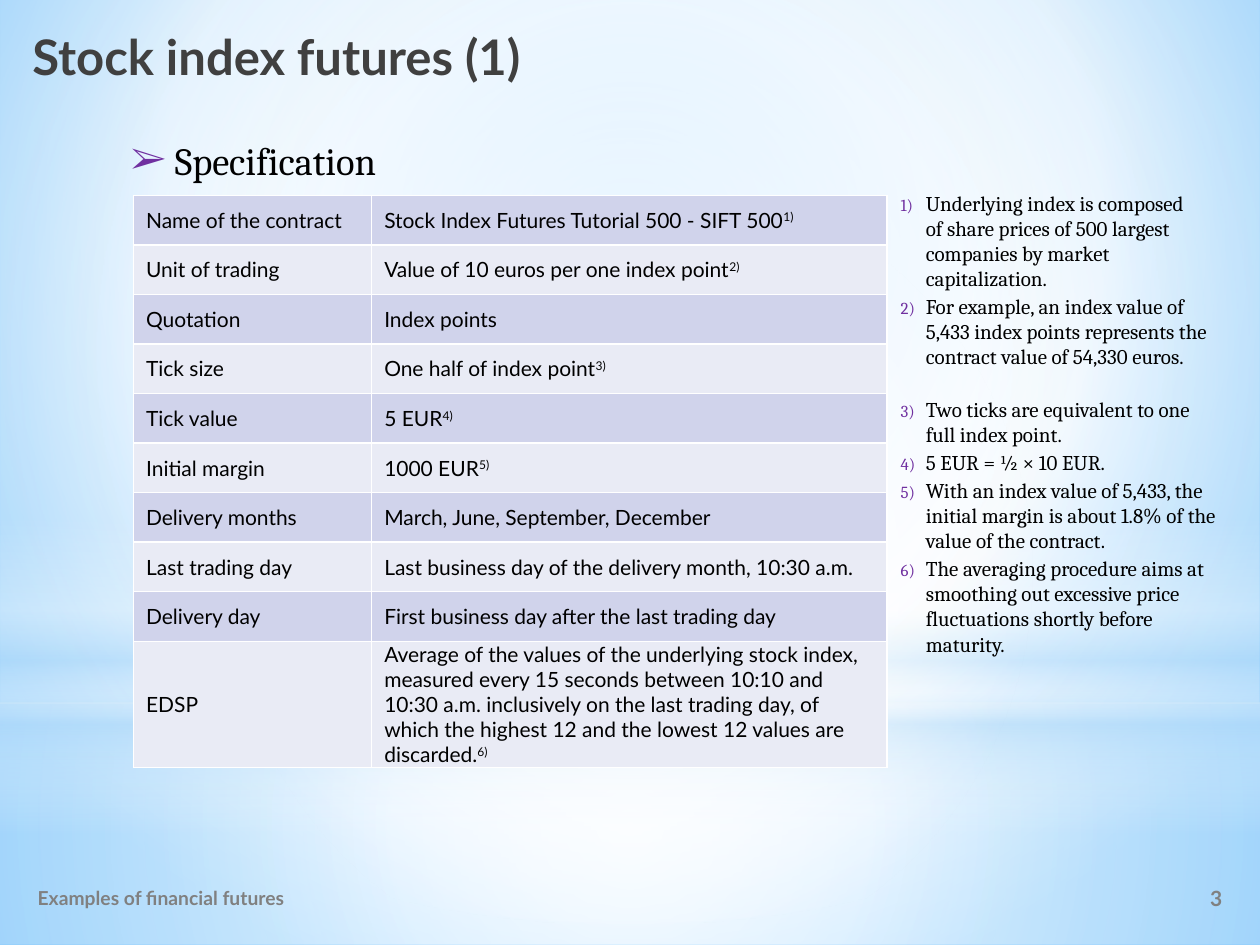
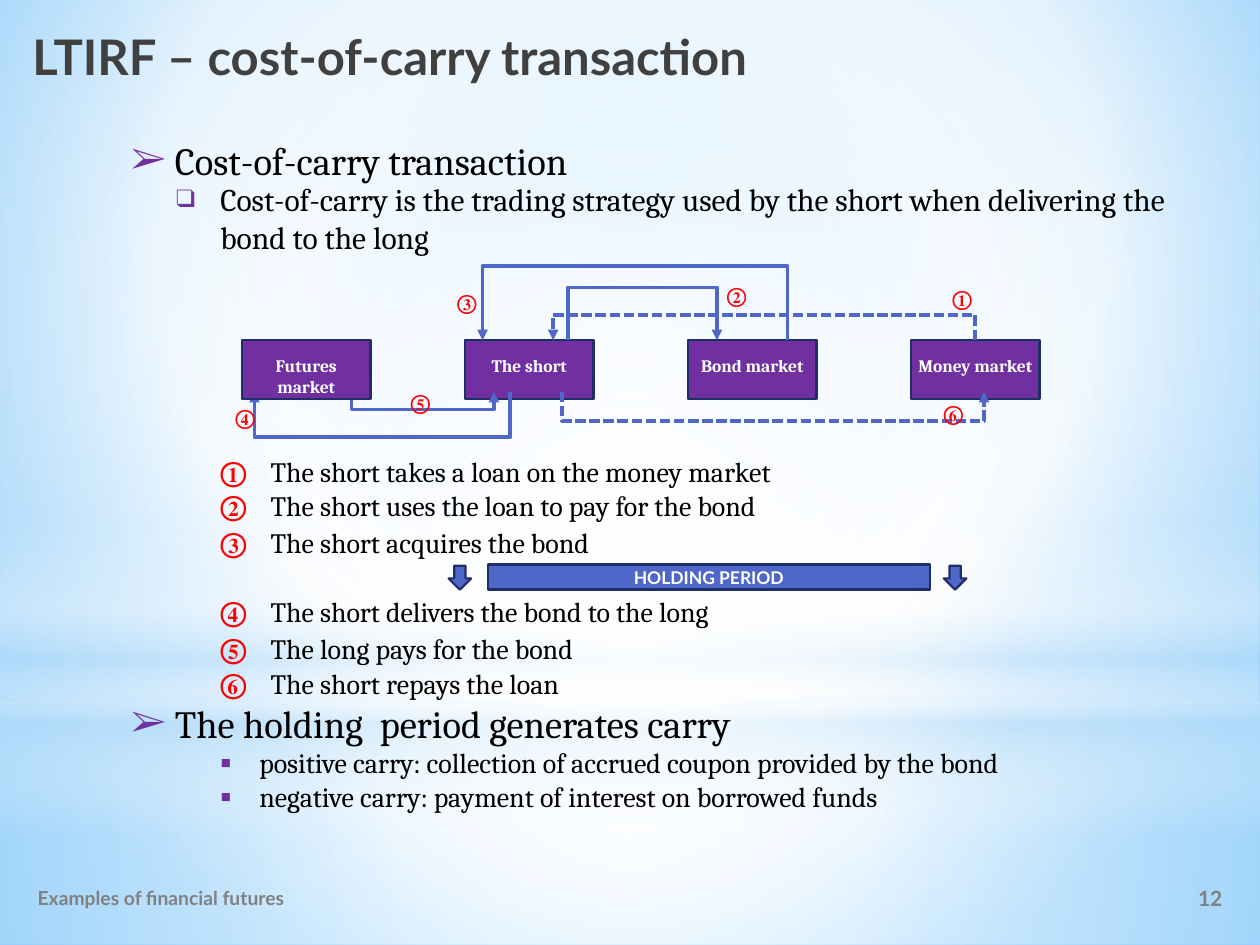
from pptx import Presentation
from pptx.dml.color import RGBColor
from pptx.enum.dml import MSO_LINE
from pptx.enum.shapes import MSO_SHAPE
from pptx.enum.text import MSO_ANCHOR, PP_ALIGN
from pptx.oxml import parse_xml
from pptx.oxml.ns import nsdecls, qn
from pptx.util import Inches, Pt

RECTANGLE, ELLIPSE, DOWN_ARROW = MSO_SHAPE.RECTANGLE, MSO_SHAPE.OVAL, MSO_SHAPE.DOWN_ARROW
LEFT, CENTER, RIGHT = PP_ALIGN.LEFT, PP_ALIGN.CENTER, PP_ALIGN.RIGHT
TOP, MIDDLE = MSO_ANCHOR.TOP, MSO_ANCHOR.MIDDLE
DASH = MSO_LINE.SQUARE_DOT

COLORS = {
    "title": "404040", "footer": "808080", "text": "000000", "white": "FFFFFF",
    "purple": "7030A0", "blue": "4E67C8", "navy": "1F2E69", "red": "FF0000",
    "row_dark": "D0D3EB", "row_light": "E9EBF5",
    "sky": "9ED5FF", "deep_sky": "5BB9FF", "haze": "B4DCFA",
}
COLOR = {name: RGBColor.from_string(value) for name, value in COLORS.items()}
HEADING_FONT, BODY_FONT = "Lato", "Cambria"


def set_gradient(properties, stops, focus=None):
    """Fill with (position, color, opacity) stops, radial around focus or else top to bottom."""
    stop_xml = "".join(
        f'<a:gs pos="{position * 1000}"><a:srgbClr val="{COLORS[color]}">'
        f'<a:alpha val="{opacity * 1000}"/></a:srgbClr></a:gs>'
        for position, color, opacity in stops)
    if focus:
        left, top, right, bottom = (edge * 1000 for edge in focus)
        direction = (f'<a:path path="circle"><a:fillToRect l="{left}" t="{top}" '
                     f'r="{right}" b="{bottom}"/></a:path>')
    else:
        direction = '<a:lin ang="5400000" scaled="0"/>'
    gradient = parse_xml(f'<a:gradFill {nsdecls("a")} rotWithShape="1">'
                         f'<a:gsLst>{stop_xml}</a:gsLst>{direction}</a:gradFill>')
    properties.replace(properties.find(qn("a:gradFill")), gradient)


def add_text(page, left, top, width, height, text, size, color="text", font=BODY_FONT,
             bold=False, align=LEFT, anchor=TOP, bullet=None, indent=0, bullet_size=100):
    """Add a one-paragraph text box; a whole-number bullet is a list number such as 2)."""
    box = page.shapes.add_textbox(Inches(left), Inches(top), Inches(width), Inches(height))
    frame = box.text_frame
    frame.word_wrap = True
    frame.vertical_anchor = anchor
    para = frame.paragraphs[0]
    para.text = text
    para.alignment = align
    span = para.runs[0]
    span.font.name, span.font.size, span.font.bold = font, Pt(size), bold
    span.font.color.rgb = COLOR[color]
    if bullet:
        settings = para._p.get_or_add_pPr()
        settings.set("marL", str(Inches(indent)))
        settings.set("indent", str(-Inches(indent)))
        if isinstance(bullet, int):
            mark = f'<a:buAutoNum {nsdecls("a")} type="arabicParenR" startAt="{bullet}"/>'
        else:
            mark = f'<a:buChar {nsdecls("a")} char="{bullet}"/>'
        for xml in (f'<a:buClr {nsdecls("a")}><a:srgbClr val="{COLORS["purple"]}"/></a:buClr>',
                    f'<a:buSzPct {nsdecls("a")} val="{bullet_size * 1000}"/>',
                    f'<a:buFont {nsdecls("a")} typeface="{font}"/>', mark):
            settings.append(parse_xml(xml))


deck = Presentation()
deck.slide_width, deck.slide_height = Inches(10), Inches(7.5)
blank = deck.slide_layouts[6]
specification = deck.slides.add_slide(blank)
carry = deck.slides.add_slide(blank)

# Shared background and light bands, kept on the master
master = deck.slide_master
master.background.fill.gradient()
set_gradient(master.element.find(".//" + qn("p:bgPr")),
             [(0, "sky", 100), (60, "white", 100), (100, "deep_sky", 100)], (20, 10, 20, 60))
middle = (50, 50, 50, 50)
bands = [
    (RECTANGLE, 5.58, 1.92, [(0, "white", 91), (37, "white", 76), (100, "haze", 79)], middle),
    (RECTANGLE, 0, 5.58, [(0, "white", 89), (48, "white", 62), (100, "haze", 79)], middle),
    (RECTANGLE, 4.12, 2.5, [(0, "white", 0), (29, "white", 30), (45, "haze", 40),
                            (55, "white", 26), (65, "haze", 60), (100, "white", 0)], None),
    (ELLIPSE, 1.75, 5.58, [(0, "white", 100), (56, "white", 0)], middle),
]
for kind, top, height, stops, focus in bands:
    band = specification.shapes.add_shape(kind, 0, Inches(top), Inches(10), Inches(height))
    band.shadow.inherit = False
    band.line.fill.background()
    band.fill.gradient()
    set_gradient(band.element.spPr, stops, focus)
    master.shapes.element.append(band.element)

# Titles, footers, page numbers and first headings
for page, title, number, heading in [
    (specification, "Stock index futures (1)", "3", "Specification"),
    (carry, "LTIRF – cost-of-carry transaction", "12", "Cost-of-carry transaction"),
]:
    add_text(page, 0.2, 6.93, 3.62, 0.39, "Examples of financial futures", 11, "footer",
             HEADING_FONT, True, anchor=MIDDLE)
    add_text(page, 7.83, 6.93, 1.97, 0.39, number, 12, "footer", HEADING_FONT, True,
             RIGHT, MIDDLE)
    add_text(page, 0.16, 0.16, 9, 0.71, title, 28, "title", HEADING_FONT, True)
    add_text(page, 0.94, 1.04, 5, 0.47, heading, 22, bullet="➢", indent=0.35)

# Contract table: label, value, footnote mark
contract = [
    ("Name of the contract", "Stock Index Futures Tutorial 500 - SIFT 500", "1)"),
    ("Unit of trading", "Value of 10 euros per one index point", "2)"),
    ("Quotation", "Index points", ""),
    ("Tick size", "One half of index point", "3)"),
    ("Tick value", "5 EUR", "4)"),
    ("Initial margin", "1000 EUR", "5)"),
    ("Delivery months", "March, June, September, December", ""),
    ("Last trading day", "Last business day of the delivery month, 10:30 a.m.", ""),
    ("Delivery day", "First business day after the last trading day", ""),
    ("EDSP", "Average of the values of the underlying stock index, measured every 15 seconds "
     "between 10:10 and 10:30 a.m. inclusively on the last trading day, of which the highest "
     "12 and the lowest 12 values are discarded.", "6)"),
]
table_height, last_height = 4.54, 1
table = specification.shapes.add_table(len(contract), 2, Inches(1.06), Inches(1.55),
                                       Inches(5.98), Inches(table_height)).table
table.first_row = table.horz_banding = False
table.columns[0].width, table.columns[1].width = Inches(1.89), Inches(4.09)
for index, (label, value, mark) in enumerate(contract):
    is_last = index == len(contract) - 1
    row_height = (table_height - last_height) / (len(contract) - 1)
    table.rows[index].height = Inches(last_height if is_last else row_height)
    for column, text in enumerate((label, value)):
        cell = table.cell(index, column)
        cell.margin_top = cell.margin_bottom = 0
        cell.vertical_anchor = MIDDLE
        para = cell.text_frame.paragraphs[0]
        para.text = text
        if column == 1 and mark:
            note_mark = para.add_run()
            note_mark.text = mark
            note_mark.font._element.set("baseline", "30000")
        for span in para.runs:
            span.font.name, span.font.size = HEADING_FONT, Pt(12)
            span.font.color.rgb = COLOR["text"]
        for side in "LRTB":
            cell._tc.get_or_add_tcPr().append(parse_xml(
                f'<a:ln{side} {nsdecls("a")} w="12700"><a:solidFill>'
                f'<a:srgbClr val="{COLORS["white"]}"/></a:solidFill></a:ln{side}>'))
        cell.fill.solid()
        cell.fill.fore_color.rgb = COLOR["row_light" if index % 2 else "row_dark"]

# Numbered notes beside the table: top, width, height, text
notes = [
    (1.46, 2.6, 0.91, "Underlying index is composed of share prices of 500 largest companies "
     "by market capitalization."),
    (2.28, 2.68, 0.71, "For example, an index value of 5,433 index points represents the "
     "contract value of 54,330 euros."),
    (3.1, 2.68, 0.5, "Two ticks are equivalent to one full index point."),
    (3.52, 2.68, 0.3, "5 EUR = ½ × 10 EUR."),
    (3.74, 2.7, 0.71, "With an index value of 5,433, the initial margin is about 1.8% of the "
     "value of the contract."),
    (4.36, 2.68, 0.91, "The averaging procedure aims at smoothing out excessive price "
     "fluctuations shortly before maturity."),
]
for number, (top, width, height, text) in enumerate(notes, 1):
    add_text(specification, 7.05, top, width, height, text, 12, bullet=number, indent=0.2,
             bullet_size=80)

# Cost-of-carry definition
add_text(carry, 1.3, 1.38, 8.43, 0.71, "Cost-of-carry is the trading strategy used by the "
         "short when delivering the bond to the long", 18, bullet="❑", indent=0.35,
         bullet_size=80)

# Market boxes, holding period bar and its arrows: kind, position, fill, text, font, anchor
markets = ["Futures market", "The short", "Bond market", "Money market"]
blocks = [(RECTANGLE, 1.92 + 1.77 * index, 2.7, 1.02, 0.47, "purple", name, BODY_FONT, TOP)
          for index, name in enumerate(markets)]
blocks += [
    (RECTANGLE, 3.87, 4.48, 3.51, 0.2, "blue", "HOLDING PERIOD", HEADING_FONT, MIDDLE),
    (DOWN_ARROW, 3.56, 4.49, 0.18, 0.19, "blue", "", HEADING_FONT, MIDDLE),
    (DOWN_ARROW, 7.49, 4.49, 0.18, 0.19, "blue", "", HEADING_FONT, MIDDLE),
]
block_shapes = []
for kind, left, top, width, height, color, text, font, anchor in blocks:
    block = carry.shapes.add_shape(kind, Inches(left), Inches(top), Inches(width), Inches(height))
    block.shadow.inherit = False
    block.fill.solid()
    block.fill.fore_color.rgb = COLOR[color]
    block.line.color.rgb, block.line.width = COLOR["navy"], Pt(1.25)
    block_shapes.append(block)
    if text:
        frame = block.text_frame
        frame.word_wrap = True
        frame.vertical_anchor = anchor
        frame.margin_left = frame.margin_right = Inches(0.04)
        frame.margin_top = Inches(0.12 if anchor == TOP else 0)
        frame.margin_bottom = 0
        para = frame.paragraphs[0]
        para.text = text
        para.alignment = CENTER
        span = para.runs[0]
        span.font.name, span.font.size, span.font.bold = font, Pt(10), True
        span.font.color.rgb = COLOR["white"]

# Flows: start x, end x, y at the boxes, y of the long stretch, dashed
flows = [
    (4.51, 5.69, 2.7, 2.28, False),
    (6.25, 3.83, 2.7, 2.11, False),
    (4.05, 2.02, 3.11, 3.47, False),
    (2.79, 3.92, 3.11, 3.25, False),
    (7.74, 4.39, 2.7, 2.5, True),
    (4.46, 7.81, 3.11, 3.34, True),
]
for start, end, box_y, turn_y, dashed in flows:
    first, *others = [(Inches(x), Inches(y)) for x, y in
                      ((start, box_y), (start, turn_y), (end, turn_y), (end, box_y))]
    builder = carry.shapes.build_freeform(*first)
    builder.add_line_segments(others, close=False)
    flow = builder.convert_to_shape()
    flow.shadow.inherit = False
    flow.fill.background()
    flow.line.color.rgb, flow.line.width = COLOR["blue"], Pt(2)
    if dashed:
        flow.line.dash_style = DASH
    flow.line._get_or_add_ln().append(parse_xml(f'<a:tailEnd {nsdecls("a")} type="triangle"/>'))

# The futures market covers the ends of its two flows
carry.shapes.element.append(block_shapes[0].element)

# Steps: symbol, place in the diagram, top in the list, text
steps = [
    ("①", 7.46, 2.22, 3.56, "The short takes a loan on the money market"),
    ("②", 5.67, 2.19, 3.83, "The short uses the loan to pay for the bond"),
    ("③", 3.53, 2.25, 4.12, "The short acquires the bond"),
    ("④", 1.77, 3.16, 4.67, "The short delivers the bond to the long"),
    ("⑤", 3.16, 3.04, 4.96, "The long pays for the bond"),
    ("⑥", 7.39, 3.13, 5.24, "The short repays the loan"),
]
for symbol, mark_left, mark_top, top, text in steps:
    add_text(carry, mark_left, mark_top, 0.31, 0.31, symbol, 12, "red", bold=True, align=CENTER)
    add_text(carry, 1.65, top, 0.39, 0.37, symbol, 16, "red", bold=True, align=CENTER)
    add_text(carry, 2.05, top, 4.5, 0.37, text, 16)

# Carry conclusions
add_text(carry, 0.94, 5.51, 5.59, 0.47, "The holding  period generates carry", 22,
         bullet="➢", indent=0.35)
for top, text in [
    (5.87, "positive carry: collection of accrued coupon provided by the bond"),
    (6.14, "negative carry: payment of interest on borrowed funds"),
]:
    add_text(carry, 1.65, top, 7.28, 0.37, text, 16, bullet="▪", indent=0.31)

deck.save("out.pptx")
